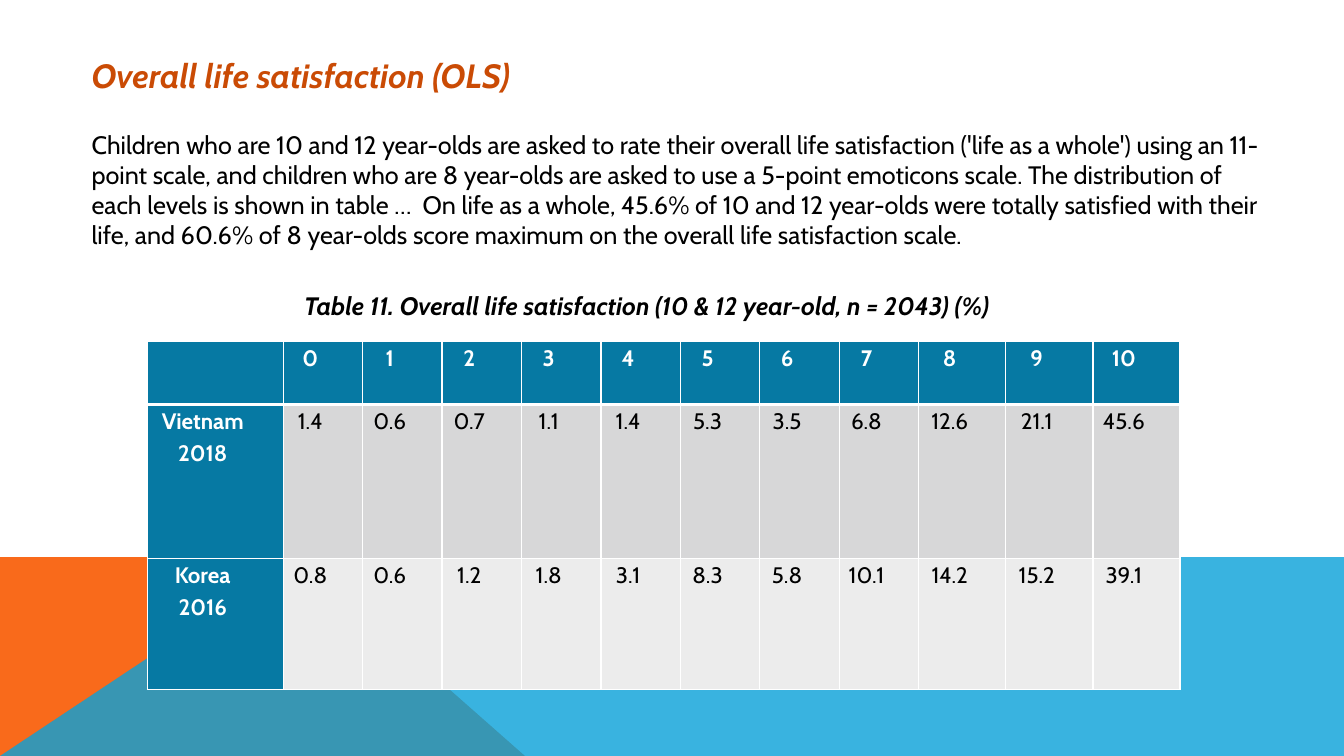
from lxml import etree
from pptx import Presentation
from pptx.dml.color import RGBColor
from pptx.enum.text import PP_ALIGN
from pptx.oxml.ns import qn
from pptx.util import Pt

CENTER = PP_ALIGN.CENTER
WHITE = RGBColor(0xFF, 0xFF, 0xFF)
BLACK = RGBColor(0, 0, 0)
ORANGE = RGBColor(0xF9, 0x6A, 0x1B)
RUST = RGBColor(0xCA, 0x4B, 0x05)
SKY = RGBColor(0x08, 0xA1, 0xD9)
TEAL = RGBColor(0x06, 0x79, 0xA3)
GRAY = RGBColor(0xD7, 0xD7, 0xD8)
PALE = RGBColor(0xEC, 0xEC, 0xEC)


def style_run(r, size, color, bold, italic):
    r.font.color.rgb = color
    values = {"name": "Cabin", "size": Pt(size), "bold": bold, "italic": italic}
    for name, value in values.items():
        setattr(r.font, name, value)


def add_border(cell, side, width):
    ln = etree.SubElement(cell._tc.get_or_add_tcPr(), qn("a:" + side), w=str(Pt(width)))
    fill = etree.SubElement(ln, qn("a:solidFill"))
    etree.SubElement(fill, qn("a:srgbClr"), val=str(WHITE))


prs = Presentation()
prs.slide_width, prs.slide_height = Pt(960), Pt(540)
s = prs.slides.add_slide(prs.slide_layouts[6])

bands = [
    ([(0, 540), (0, 397.5), (214.5, 397.5), (375, 540)], ORANGE, 100),
    ([(0, 540), (214, 397.5), (960, 398), (960, 540)], SKY, 80),
]
for points, color, opacity in bands:
    builder = s.shapes.build_freeform(*points[0], scale=Pt(1))
    builder.add_line_segments(points[1:], close=True)
    sp = builder.convert_to_shape()
    sp.shadow.inherit = False
    sp.line.fill.background()
    sp.fill.solid()
    sp.fill.fore_color.rgb = color
    if opacity < 100:
        clr = sp._element.spPr.find(qn("a:solidFill")).find(qn("a:srgbClr"))
        etree.SubElement(clr, qn("a:alpha"), val=str(opacity * 1000))

body = (
    "Children who are 10 and 12 year-olds are asked to rate their overall life "
    "satisfaction ('life as a whole') using an 11-point scale, and children who are "
    "8 year-olds are asked to use a 5-point emoticons scale. The distribution of each "
    "levels is shown in table …  On life as a whole, 45.6% of 10 and 12 year-olds were "
    "totally satisfied with their life, and 60.6% of 8 year-olds score maximum on the "
    "overall life satisfaction scale."
)
caption = "Table 11. Overall life satisfaction (10 & 12 year-old, n = 2043) (%)"
texts = [
    ("Overall life satisfaction (OLS)", (58.3, 36, 464, 36), 24, RUST, True),
    (body, (58.3, 88.6, 851, 116.6), 18, BLACK, False),
    (caption, (210.2, 203.8, 531, 29), 18, BLACK, True),
]
for text, box, size, color, emphasis in texts:
    tf = s.shapes.add_textbox(*map(Pt, box)).text_frame
    tf.word_wrap = True
    r = tf.paragraphs[0].add_run()
    r.text = text
    style_run(r, size, color, emphasis, emphasis)

rows = [
    ["", *map(str, range(11))],
    ["Vietnam 2018", "1.4", "0.6", "0.7", "1.1", "1.4", "5.3", "3.5", "6.8",
     "12.6", "21.1", "45.6"],
    ["Korea 2016", "0.8", "0.6", "1.2", "1.8", "3.1", "8.3", "5.8", "10.1",
     "14.2", "15.2", "39.1"],
]
widths = [97] + [56.75] * 8 + [62.2] * 3
heights = [45.2, 110, 93.7]
row_fills = [TEAL, GRAY, PALE]
cell_margins = {"margin_left": Pt(5), "margin_right": Pt(23),
                "margin_top": Pt(0), "margin_bottom": Pt(0)}
para_format = {"alignment": CENTER, "line_spacing": 1.15, "space_before": Pt(0.6)}

table = s.shapes.add_table(len(rows), len(widths), Pt(105.3), Pt(243.7),
                           Pt(sum(widths)), Pt(sum(heights))).table
for column, width in zip(table.columns, widths):
    column.width = Pt(width)
for i, values in enumerate(rows):
    table.rows[i].height = Pt(heights[i])
    for j, value in enumerate(values):
        cell = table.cell(i, j)
        heading = i == 0 or j == 0
        for name, margin in cell_margins.items():
            setattr(cell, name, margin)
        for side in ("lnL", "lnR", "lnT", "lnB"):
            thick = (i, side) in ((0, "lnB"), (1, "lnT"))
            add_border(cell, side, 3 if thick else 1)
        cell.fill.solid()
        cell.fill.fore_color.rgb = TEAL if heading else row_fills[i]
        if value:
            p = cell.text_frame.paragraphs[0]
            for name, setting in para_format.items():
                setattr(p, name, setting)
            r = p.add_run()
            r.text = value
            style_run(r, 16, WHITE if heading else BLACK, heading, False)

prs.save("out.pptx")
